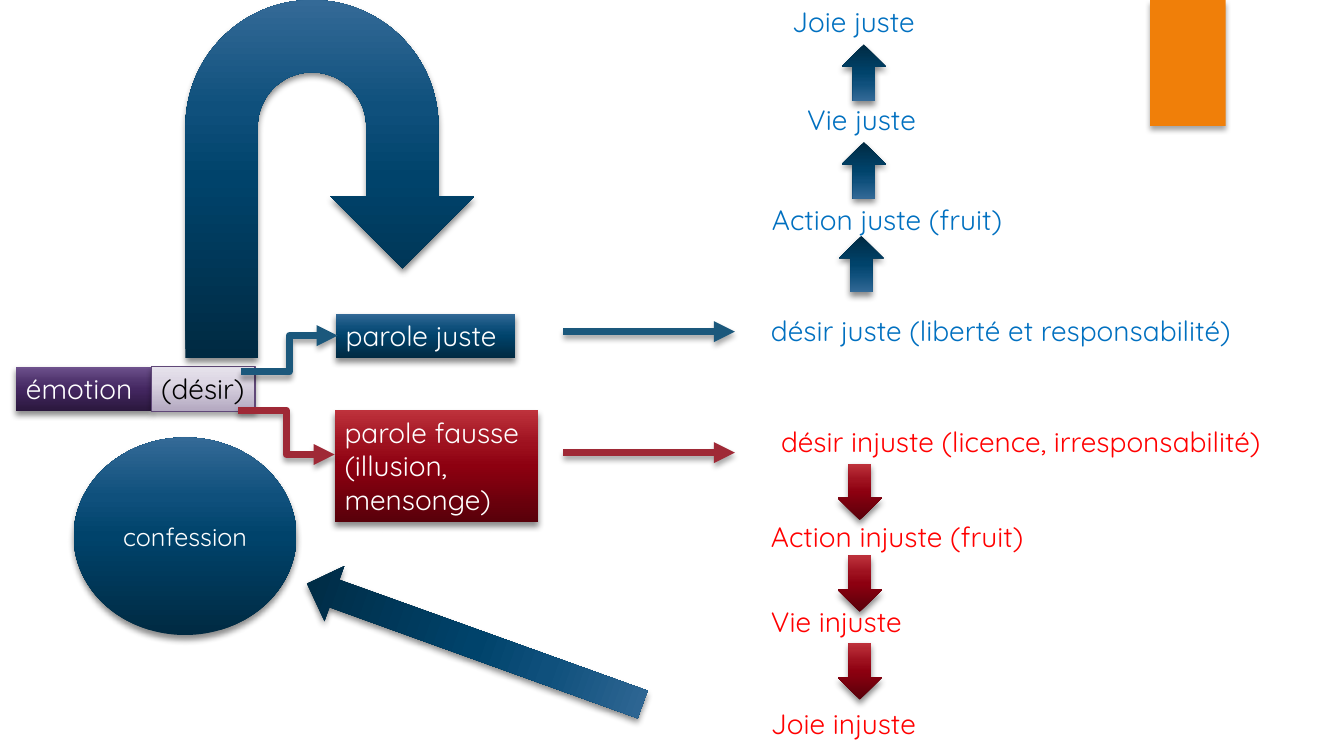
from dataclasses import dataclass, field
from typing import NamedTuple, Optional

import lxml.etree
import pptx
import pptx.dml.color
import pptx.enum.shapes
import pptx.enum.text
import pptx.oxml
import pptx.oxml.ns
import pptx.util

Pt = pptx.util.Pt
Kind = pptx.enum.shapes.MSO_SHAPE
Anchor = pptx.enum.text.MSO_ANCHOR
Align = pptx.enum.text.PP_ALIGN


class Shadow(NamedTuple):
    opacity: int
    blur: float
    distance: float


class Gradient(NamedTuple):
    stops: tuple[tuple[int, str], ...]


@dataclass(frozen=True)
class Theme:
    font: str = "Quicksand"
    label_size: int = 20
    circle_size: int = 18
    white: str = "FFFFFF"
    black: str = "000000"
    orange: str = "F07F09"
    just_text: str = "0070C0"
    unjust_text: str = "FF0000"
    just_line: str = "1B587C"
    unjust_line: str = "9F2936"
    desire_line: str = "604878"
    blue: Gradient = Gradient(((0, "002A42"), (50, "00436B"), (70, "0F507C"), (100, "346A97")))
    red: Gradient = Gradient(((0, "58000A"), (50, "8D0010"), (70, "9E111F"), (100, "BE323C")))
    purple: Gradient = Gradient(((0, "2A173D"), (50, "442761"), (70, "523670"), (100, "6E528D")))
    lilac: Gradient = Gradient(((0, "B3A8C0"), (65, "DCD6E3"), (100, "E6E2EC")))
    strong: Shadow = Shadow(45, 4.5, 3)
    soft: Shadow = Shadow(35, 4, 3)


THEME = Theme()


class Frame(NamedTuple):
    left: float
    top: float
    width: float
    height: float


@dataclass(frozen=True)
class Block:
    kind: Kind
    frame: Frame
    fill: Gradient | str
    text: str = ""
    color: str = THEME.white
    size: int = THEME.label_size
    shadow: Shadow = THEME.strong
    line: Optional[str] = None
    rotation: float = 0


@dataclass(frozen=True)
class Label:
    text: str
    left: float
    top: float
    width: float
    color: str


@dataclass(frozen=True)
class Link:
    start: tuple[float, float]
    end: tuple[float, float]
    color: str
    kind: pptx.enum.shapes.MSO_CONNECTOR = field(default=pptx.enum.shapes.MSO_CONNECTOR.STRAIGHT)


LINE_HEIGHT = 31.7

# Boxes on the left
BOXES = [
    Block(Kind.RECTANGLE, Frame(821.5, 0, 54, 90), THEME.orange, shadow=THEME.soft),
    Block(Kind.RECTANGLE, Frame(11.5, 262, 96.5, LINE_HEIGHT), THEME.purple, "émotion"),
    Block(Kind.RECTANGLE, Frame(108, 262, 74.2, LINE_HEIGHT), THEME.lilac, "(désir)",
          THEME.black, shadow=THEME.soft, line=THEME.desire_line),
    Block(Kind.RECTANGLE, Frame(239, 293, 145.5, 80), THEME.red,
          "parole fausse\n(illusion,\nmensonge)"),
    Block(Kind.RECTANGLE, Frame(239.8, 224, 128.2, LINE_HEIGHT), THEME.blue, "parole juste"),
]

# Two chains on the right
LABELS = [
    Label("Joie juste", 558.7, 0, 110.2, THEME.just_text),
    Label("Vie juste", 569.5, 69.8, 95.8, THEME.just_text),
    Label("Action juste (fruit)", 544.3, 141.1, 185, THEME.just_text),
    Label("désir juste (liberté et responsabilité)", 543.6, 220.3, 355.7, THEME.just_text),
    Label("désir injuste (licence, irresponsabilité)", 550.8, 299.5, 373.7, THEME.unjust_text),
    Label("Action injuste (fruit)", 543.6, 367.2, 200.9, THEME.unjust_text),
    Label("Vie injuste", 543.6, 428.4, 112.3, THEME.unjust_text),
    Label("Joie injuste", 543.6, 501.1, 121, THEME.unjust_text),
]
CHAIN_ARROWS = [
    Block(Kind.DOWN_ARROW, Frame(left, top, LINE_HEIGHT, 40.3), fill, rotation=rotation)
    for left, top, fill, rotation in [
        (601.2, 31.7, THEME.blue, 180),
        (601.2, 101.5, THEME.blue, 180),
        (599.4, 168.5, THEME.blue, 180),
        (598.3, 331.2, THEME.red, 0),
        (598.3, 396.7, THEME.red, 0),
        (598.3, 459.4, THEME.red, 0),
    ]
]

# Links between boxes and chains
ELBOW = pptx.enum.shapes.MSO_CONNECTOR.ELBOW
LINKS = [
    Link((169.9, 293), (239, 324.7), THEME.unjust_line, ELBOW),
    Link((172.1, 265.7), (241.2, 239.8), THEME.just_line, ELBOW),
    Link((402.5, 323.3), (524.9, 323.3), THEME.unjust_line),
    Link((402.5, 236.9), (524.9, 236.9), THEME.just_line),
]

# Way back through confession
RETURN_PATH = [
    Block(Kind.DOWN_ARROW, Frame(318.2, 332.6, 41.8, 254.9), THEME.blue, rotation=109.8),
    Block(Kind.OVAL, Frame(52.6, 312.5, 159.1, 141.1), THEME.blue, "confession",
          size=THEME.circle_size),
    Block(Kind.U_TURN_ARROW, Frame(132.5, 0, 206.6, 255.6), THEME.blue),
]


def rgb(color: str) -> pptx.dml.color.RGBColor:
    return pptx.dml.color.RGBColor.from_string(color)


def apply_format(target, values: dict) -> None:
    for name, value in values.items():
        setattr(target, name, value)


def add_shadow(shape, shadow: Shadow) -> None:
    namespace = pptx.oxml.ns.nsdecls("a")
    shape._element.spPr.append(pptx.oxml.parse_xml(
        f'<a:effectLst {namespace}><a:outerShdw blurRad="{Pt(shadow.blur)}" '
        f'dist="{Pt(shadow.distance)}" dir="5400000" rotWithShape="0">'
        f'<a:srgbClr val="{THEME.black}"><a:alpha val="{shadow.opacity * 1000}"/></a:srgbClr>'
        '</a:outerShdw></a:effectLst>'))


def paint(shape, fill: Gradient | str) -> None:
    if isinstance(fill, str):
        shape.fill.solid()
        shape.fill.fore_color.rgb = rgb(fill)
        return
    shape.fill.gradient()
    shape.fill.gradient_angle = 90
    stops = shape._element.spPr.find(".//" + pptx.oxml.ns.qn("a:gsLst"))
    for stop in list(stops):
        stops.remove(stop)
    for position, color in fill.stops:
        stop = lxml.etree.SubElement(stops, pptx.oxml.ns.qn("a:gs"), pos=str(position * 1000))
        lxml.etree.SubElement(stop, pptx.oxml.ns.qn("a:srgbClr"), val=color)


def write(shape, text: str, color: str, size: int, centred: bool = False) -> None:
    box = shape.text_frame
    box.text = text
    fit = pptx.enum.text.MSO_AUTO_SIZE
    apply_format(box, {
        "word_wrap": centred,
        "auto_size": fit.NONE if centred else fit.SHAPE_TO_FIT_TEXT,
        "vertical_anchor": Anchor.MIDDLE if centred else Anchor.TOP,
    })
    for para in box.paragraphs:
        para.alignment = Align.CENTER if centred else Align.LEFT
        for span in para.runs:
            apply_format(span.font, {"name": THEME.font, "size": Pt(size)})
            span.font.color.rgb = rgb(color)


def add_block(page, block: Block) -> None:
    shape = page.shapes.add_shape(block.kind, *map(Pt, block.frame))
    shape.rotation = block.rotation
    paint(shape, block.fill)
    if block.line:
        shape.line.color.rgb = rgb(block.line)
        shape.line.width = Pt(0.75)
    else:
        shape.line.fill.background()
    add_shadow(shape, block.shadow)
    if block.text:
        write(shape, block.text, block.color, block.size, block.kind == Kind.OVAL)


def add_label(page, label: Label) -> None:
    frame = Frame(label.left, label.top, label.width, LINE_HEIGHT)
    write(page.shapes.add_textbox(*map(Pt, frame)), label.text, label.color, THEME.label_size)


def add_link(page, link: Link) -> None:
    connector = page.shapes.add_connector(link.kind, *map(Pt, link.start + link.end))
    connector.line.color.rgb = rgb(link.color)
    connector.line.width = Pt(5)
    lxml.etree.SubElement(connector.line._get_or_add_ln(), pptx.oxml.ns.qn("a:tailEnd"),
                          type="triangle")
    add_shadow(connector, THEME.soft)


def main() -> None:
    deck = pptx.Presentation()
    apply_format(deck, {"slide_width": Pt(960), "slide_height": Pt(540)})
    page = deck.slides.add_slide(deck.slide_layouts[6])
    for draw, items in [(add_block, BOXES), (add_label, LABELS), (add_link, LINKS),
                        (add_block, CHAIN_ARROWS + RETURN_PATH)]:
        for item in items:
            draw(page, item)
    deck.save("out.pptx")


if __name__ == "__main__":
    main()
